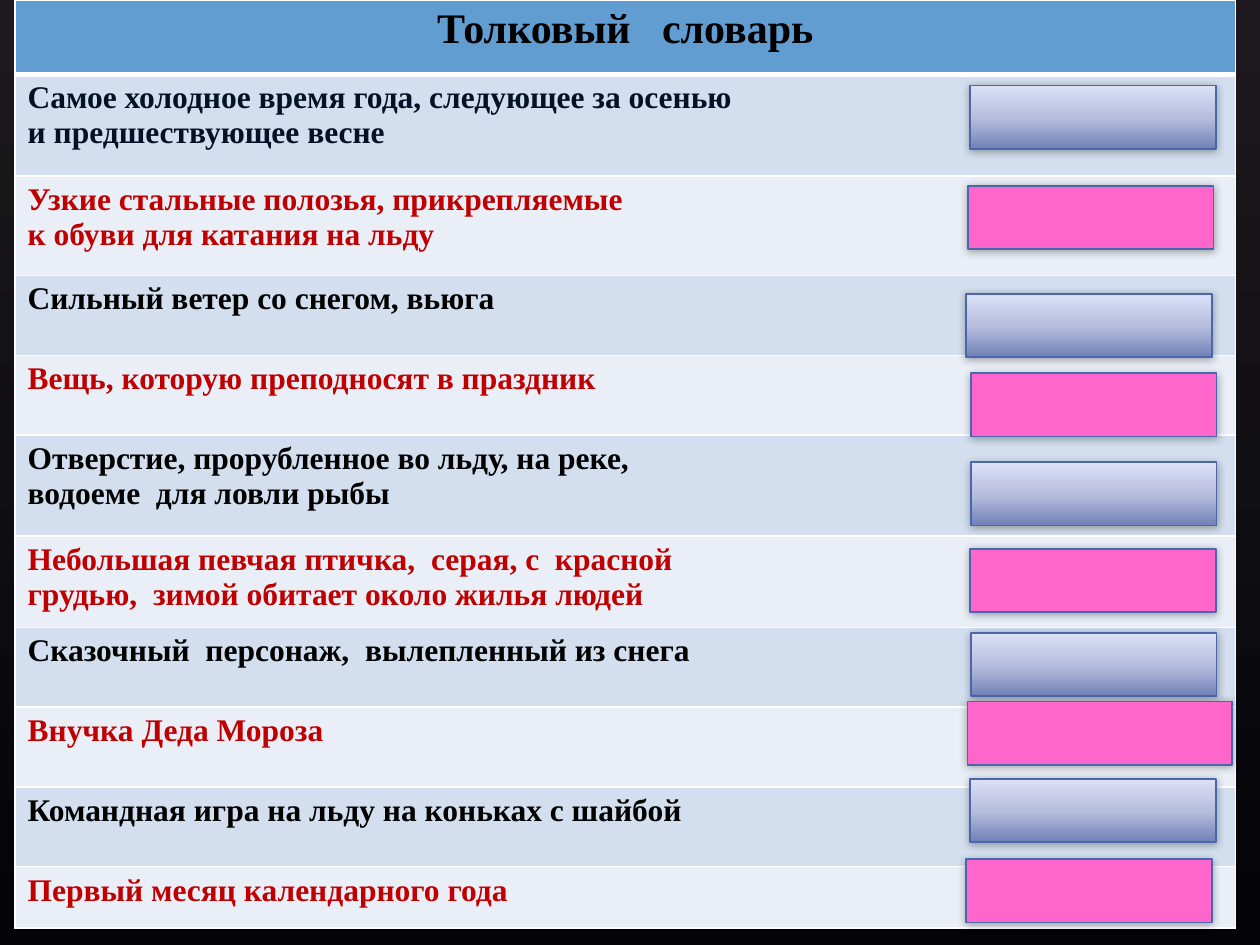
"""Build a slide with a winter glossary table and covering answer cards."""
import pptx
import pptx.util
import pptx.dml.color
import pptx.enum.shapes
import pptx.enum.text
import pptx.oxml
import pptx.oxml.ns
import pptx.oxml.xmlchemy

Pt = pptx.util.Pt
RGBColor = pptx.dml.color.RGBColor
Align = pptx.enum.text.PP_ALIGN
qn = pptx.oxml.ns.qn

BLACK = RGBColor(0x00, 0x00, 0x00)
WHITE = RGBColor(0xFF, 0xFF, 0xFF)
NAVY = RGBColor(0x03, 0x12, 0x27)
RED = RGBColor(0xC0, 0x00, 0x00)
HEADER_BLUE = RGBColor(0x62, 0x9D, 0xD1)
BAND_BLUE = RGBColor(0xD3, 0xDF, 0xEE)
BAND_PALE = RGBColor(0xEA, 0xEF, 0xF7)
PINK = RGBColor(0xFF, 0x66, 0xCC)
OUTLINE = RGBColor(0x4A, 0x66, 0xAC)
CARD_STOPS = [
    (0, RGBColor(0x71, 0x81, 0xB7)),
    (48, RGBColor(0xB6, 0xBD, 0xDD)),
    (100, RGBColor(0xDC, 0xE1, 0xF7)),
]
NIGHT_STOPS = [(0, RGBColor(0x1D, 0x19, 0x1E)), (100, RGBColor(0x04, 0x04, 0x08))]

HEADING = "Толковый   словарь"
HEADING_HEIGHT = 42.5
DEFINITIONS = [
    ("Самое холодное время года, следующее за осенью\nи предшествующее весне", 58, NAVY),
    ("Узкие стальные полозья, прикрепляемые\nк обуви для катания на льду", 57, RED),
    ("Сильный ветер со снегом, вьюга", 45.6, BLACK),
    ("Вещь, которую преподносят в праздник", 45.6, RED),
    ("Отверстие, прорубленное во льду, на реке,\nводоеме  для ловли рыбы", 57.6, BLACK),
    ("Небольшая певчая птичка,  серая, с  красной\n"
     "грудью,  зимой обитает около жилья людей", 52.3, RED),
    ("Сказочный  персонаж,  вылепленный из снега", 45.6, BLACK),
    ("Внучка Деда Мороза", 45.6, RED),
    ("Командная игра на льду на коньках с шайбой", 45.6, BLACK),
    ("Первый месяц календарного года", 35, RED),
]
CARD_WIDTH = 140.4
CARDS = [
    (554.4, 48.8, CARD_WIDTH), (553, 106.2, CARD_WIDTH),
    (552, 167.8, CARD_WIDTH), (554.8, 213.2, CARD_WIDTH),
    (554.8, 264.2, CARD_WIDTH), (554.4, 313.6, CARD_WIDTH),
    (554.8, 361.6, CARD_WIDTH), (552.8, 400.8, 151.4),
    (554.4, 445, CARD_WIDTH), (552, 491, CARD_WIDTH),
]


class GlossarySlide:
    """Hold the style and the slide, and add each kind of element."""

    font = "Times New Roman"

    def __init__(self, presentation):
        self.slide = presentation.slides.add_slide(presentation.slide_layouts[6])

    def child(self, parent, tag, **attributes):
        """Append a DrawingML element and return it."""
        element = pptx.oxml.xmlchemy.OxmlElement(tag)
        for name, value in attributes.items():
            element.set(name, str(value))
        parent.append(element)
        return element

    def gradient(self, fill, owner, stops, angle):
        """Give a fill any number of gradient stops."""
        fill.gradient()
        fill.gradient_angle = angle
        stop_list = next(owner.iter(qn("a:gsLst")))
        for stop in list(stop_list):
            stop_list.remove(stop)
        for percent, color in stops:
            stop = self.child(stop_list, "a:gs", pos=percent * 1000)
            self.child(stop, "a:srgbClr", val=color)

    def background(self, stops):
        """Fill the slide background from top to bottom."""
        self.gradient(self.slide.background.fill, self.slide.element, stops, 270)

    def cell(self, cell, text, size, color, fill, alignment, top=1, bottom=1):
        """Write and format one table cell with white borders."""
        cell.text_frame.text = text
        for paragraph in cell.text_frame.paragraphs:
            paragraph.alignment = alignment
            for run in paragraph.runs:
                run.font.name = self.font
                run.font.size = Pt(size)
                run.font.bold = True
                run.font.color.rgb = color
        properties = cell._tc.get_or_add_tcPr()
        for side, width in (("L", 1), ("R", 1), ("T", top), ("B", bottom)):
            line = self.child(properties, "a:ln" + side, w=Pt(width))
            self.child(self.child(line, "a:solidFill"), "a:srgbClr", val=WHITE)
        cell.fill.solid()
        cell.fill.fore_color.rgb = fill

    def table(self, left, top, width, heading, heading_height, definitions):
        """Add the heading row and the banded definition rows."""
        heights = [heading_height] + [height for _, height, _ in definitions]
        frame = self.slide.shapes.add_table(
            len(heights), 1, Pt(left), Pt(top), Pt(width), Pt(sum(heights)))
        table = frame.table
        for row, height in zip(table.rows, heights):
            row.height = Pt(height)
        self.cell(table.cell(0, 0), heading, 24, BLACK, HEADER_BLUE, Align.CENTER, bottom=3)
        for index, (text, _, color) in enumerate(definitions, start=1):
            self.cell(
                table.cell(index, 0), text, 18, color,
                BAND_BLUE if index % 2 else BAND_PALE,
                Align.JUSTIFY if "\n" in text else Align.LEFT,
                top=3 if index == 1 else 1)

    def card(self, left, top, width, height, pink):
        """Add a shadowed card that covers an answer."""
        shape = self.slide.shapes.add_shape(
            pptx.enum.shapes.MSO_SHAPE.RECTANGLE, Pt(left), Pt(top), Pt(width), Pt(height))
        if pink:
            shape.fill.solid()
            shape.fill.fore_color.rgb = PINK
        else:
            self.gradient(shape.fill, shape.element, CARD_STOPS, 90)
        shape.line.color.rgb = OUTLINE
        shape.line.width = Pt(1)
        shape.shadow.inherit = False
        effects = next(shape.element.iter(qn("a:effectLst")))
        shadow = self.child(effects, "a:outerShdw", blurRad=Pt(5), dist=Pt(1),
                            dir=5400000, rotWithShape=0)
        color = self.child(shadow, "a:srgbClr", val=BLACK)
        self.child(color, "a:alpha", val=32000)


def main():
    """Build and save the presentation."""
    presentation = pptx.Presentation()
    presentation.slide_width = Pt(720)
    presentation.slide_height = Pt(540)
    glossary = GlossarySlide(presentation)
    glossary.background(NIGHT_STOPS)
    glossary.table(8.6, 0, 697.5, HEADING, HEADING_HEIGHT, DEFINITIONS)
    for index, (left, top, width) in enumerate(CARDS):
        glossary.card(left, top, width, 36.2, pink=index % 2 == 1)
    presentation.save("out.pptx")


if __name__ == "__main__":
    main()
